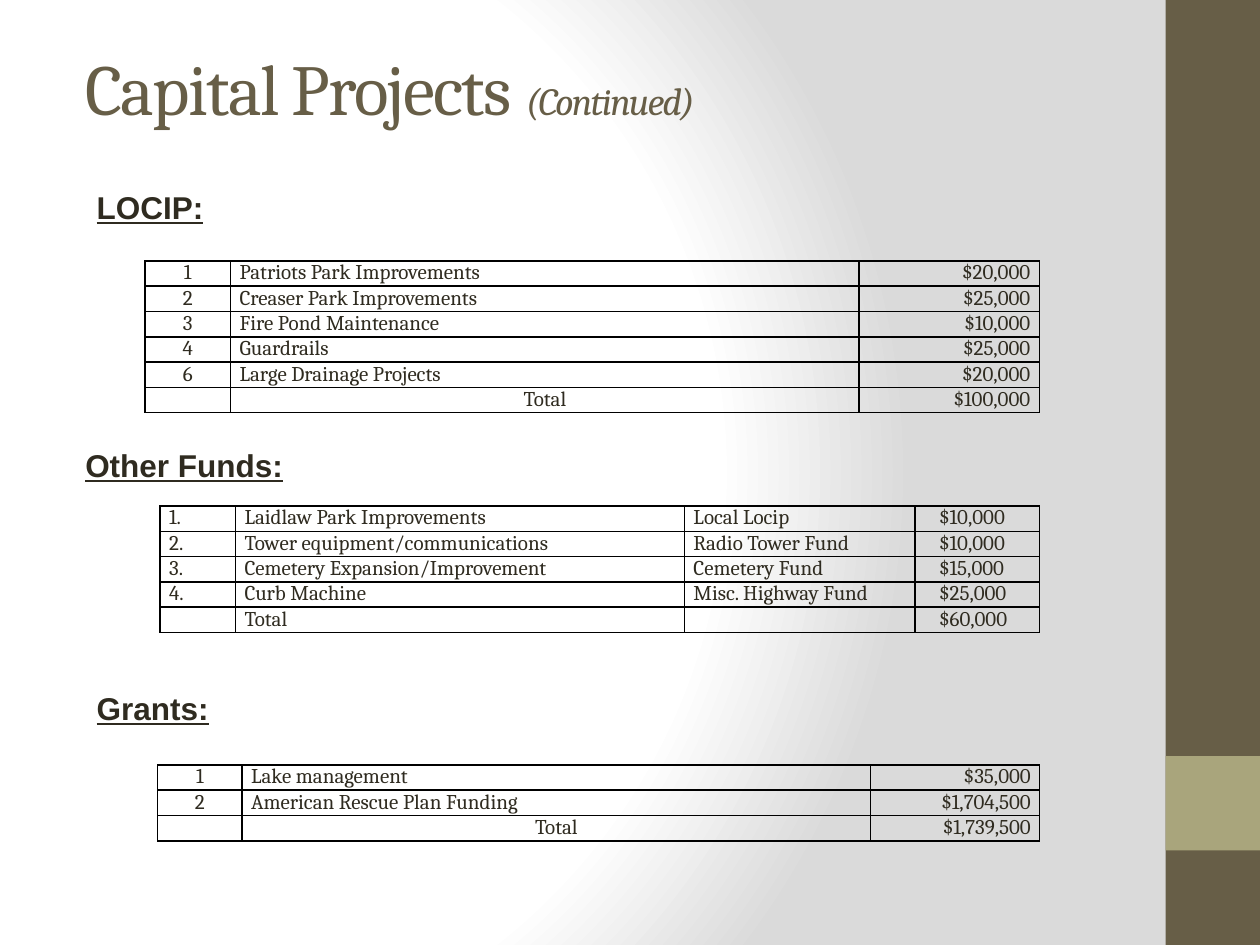
from lxml import etree
from pptx import Presentation
from pptx.dml.color import RGBColor
from pptx.enum.shapes import MSO_SHAPE
from pptx.enum.text import MSO_ANCHOR, PP_ALIGN
from pptx.oxml import parse_xml
from pptx.oxml.ns import nsdecls, qn
from pptx.util import Cm, Pt

LEFT, CENTER, RIGHT, JUSTIFY = PP_ALIGN.LEFT, PP_ALIGN.CENTER, PP_ALIGN.RIGHT, PP_ALIGN.JUSTIFY
RECTANGLE = MSO_SHAPE.RECTANGLE
MIDDLE, TOP = MSO_ANCHOR.MIDDLE, MSO_ANCHOR.TOP

BROWN, OLIVE, INK, BLACK = "675E47", "A9A57C", "2F2B20", "000000"
WHITE, GRAY = "FFFFFF", "DADADA"
PLAIN_TABLE_STYLE = "{2D5ABB26-0587-4C30-8999-92F81FD0307C}"
ROW_HEIGHT = 0.51
CELL_MARGIN = 0.18
CELL_TEXT_SIZE = 12

LOCIP_ROWS = [
    ("1", "Patriots Park Improvements", "$20,000"),
    ("2", "Creaser Park Improvements", "$25,000"),
    ("3", "Fire Pond Maintenance", "$10,000"),
    ("4", "Guardrails", "$25,000"),
    ("6", "Large Drainage Projects", "$20,000"),
    ("", "Total", "$100,000"),
]
OTHER_FUNDS_ROWS = [
    ("1.", "Laidlaw Park Improvements", "Local Locip", "$10,000"),
    ("2.", "Tower equipment/communications", "Radio Tower Fund", "$10,000"),
    ("3.", "Cemetery Expansion/Improvement", "Cemetery Fund", "$15,000"),
    ("4.", "Curb Machine", "Misc. Highway Fund", "$25,000"),
    ("", "Total", "", "$60,000"),
]
GRANTS_ROWS = [
    ("1", "Lake management", "$35,000"),
    ("2", "American Rescue Plan Funding", "$1,704,500"),
    ("", "Total", "$1,739,500"),
]


def color(hex_value):
    return RGBColor.from_string(hex_value)


def add_text(paragraph, text, size=CELL_TEXT_SIZE, font="Cambria", fill=INK,
             bold=False, italic=False, underline=False, spacing=0):
    """Add one formatted run; spacing is the letter spacing in points."""
    run = paragraph.add_run()
    run.text = text
    run.font.name = font
    run.font.size = Pt(size)
    run.font.bold = bold
    run.font.italic = italic
    run.font.underline = underline
    run.font.color.rgb = color(fill)
    if spacing:
        run.font._element.set("spc", str(spacing * 100))


def set_background(slide):
    """Fill the slide with a circular gradient from white to gray."""
    slide.background.fill.gradient()
    linear = next(slide.element.iter(qn("a:gradFill")))
    stops = "".join(
        f'<a:gs pos="{position * 1000}"><a:srgbClr val="{shade}"/></a:gs>'
        for position, shade in ((0, WHITE), (75, WHITE), (100, GRAY)))
    circular = parse_xml(
        f'<a:gradFill {nsdecls("a")} rotWithShape="1"><a:gsLst>{stops}</a:gsLst>'
        '<a:path path="circle">'
        '<a:fillToRect l="20000" t="50000" r="100000" b="50000"/>'
        '</a:path></a:gradFill>')
    linear.getparent().replace(linear, circular)


def add_block(slide, left, top, width, height, fill):
    block = slide.shapes.add_shape(RECTANGLE, Cm(left), Cm(top), Cm(width), Cm(height))
    block.shadow.inherit = False
    block.fill.solid()
    block.fill.fore_color.rgb = color(fill)
    block.line.fill.background()


def add_side_band(slide, left, top, width, height):
    add_block(slide, left, top, width, height, BROWN)
    add_block(slide, left, top + height * 0.8, width, height * 0.1, OLIVE)


def add_text_box(slide, left, top, width, height, anchor=TOP, wrap=True):
    """Add an empty text box and return its first paragraph."""
    box = slide.shapes.add_textbox(Cm(left), Cm(top), Cm(width), Cm(height))
    box.text_frame.word_wrap = wrap
    box.text_frame.vertical_anchor = anchor
    return box.text_frame.paragraphs[0]


def add_title(slide, left, top, width, height):
    paragraph = add_text_box(slide, left, top, width, height, anchor=MIDDLE)
    add_text(paragraph, "Capital Projects ", size=41, fill=BROWN, spacing=-1)
    add_text(paragraph, "(Continued)", size=22, fill=BROWN, italic=True, spacing=-1)


def add_heading(slide, text, left, top, width, height=1.02):
    paragraph = add_text_box(slide, left, top, width, height, wrap=False)
    add_text(paragraph, text, size=18, font="Arial", bold=True, underline=True)


def add_cell_borders(cell):
    properties = cell._tc.get_or_add_tcPr()
    for side in ("lnL", "lnR", "lnT", "lnB"):
        line = etree.SubElement(properties, qn(f"a:{side}"), w=str(Pt(1)))
        solid = etree.SubElement(line, qn("a:solidFill"))
        etree.SubElement(solid, qn("a:srgbClr"), val=BLACK)


def fill_cell(cell, text, alignment, left_margin):
    cell.margin_left, cell.margin_right = Cm(left_margin), Cm(CELL_MARGIN)
    cell.margin_top = cell.margin_bottom = 0
    add_cell_borders(cell)
    cell.fill.background()
    paragraph = cell.text_frame.paragraphs[0]
    paragraph.alignment = alignment
    if text:
        add_text(paragraph, text)
    else:
        # Keeps an empty cell from making its row taller.
        paragraph._p.get_or_add_endParaRPr().set("sz", str(CELL_TEXT_SIZE * 100))


def add_fund_table(slide, rows, left, top, widths, alignments,
                   center_total=False, amount_margin=CELL_MARGIN):
    frame = slide.shapes.add_table(len(rows), len(widths), Cm(left), Cm(top),
                                   Cm(sum(widths)), Cm(ROW_HEIGHT * len(rows)))
    table = frame.table
    table.first_row = table.horz_banding = False
    table._tbl.tblPr.find(qn("a:tableStyleId")).text = PLAIN_TABLE_STYLE
    for column, width in zip(table.columns, widths):
        column.width = Cm(width)
    for row, texts in zip(table.rows, rows):
        row.height = Cm(ROW_HEIGHT)
        for index, (cell, text) in enumerate(zip(row.cells, texts)):
            is_amount = index == len(widths) - 1
            alignment = CENTER if center_total and text == "Total" else alignments[index]
            fill_cell(cell, text, alignment, amount_margin if is_amount else CELL_MARGIN)


def main():
    presentation = Presentation()
    presentation.slide_width, presentation.slide_height = Cm(25.4), Cm(19.05)
    slide = presentation.slides.add_slide(presentation.slide_layouts[6])

    set_background(slide)
    add_side_band(slide, 23.5, 0, 1.9, 19.05)
    add_title(slide, 1.47, 0.91, 16.94, 1.7)

    numbered = (CENTER, LEFT, RIGHT)
    add_heading(slide, "LOCIP:", 1.7, 3.66, 2.69)
    add_fund_table(slide, LOCIP_ROWS, 2.92, 5.26, (1.73, 12.67, 3.63), numbered,
                   center_total=True)
    add_heading(slide, "Other Funds:", 1.47, 8.86, 4.55)
    add_fund_table(slide, OTHER_FUNDS_ROWS, 3.23, 10.2, (1.52, 9.05, 4.65, 2.51),
                   (JUSTIFY,) * 4, amount_margin=0.48)
    add_heading(slide, "Grants:", 1.7, 13.77, 4.32)
    add_fund_table(slide, GRANTS_ROWS, 3.18, 15.42, (1.7, 12.67, 3.41), numbered,
                   center_total=True)

    presentation.save("out.pptx")


if __name__ == "__main__":
    main()
